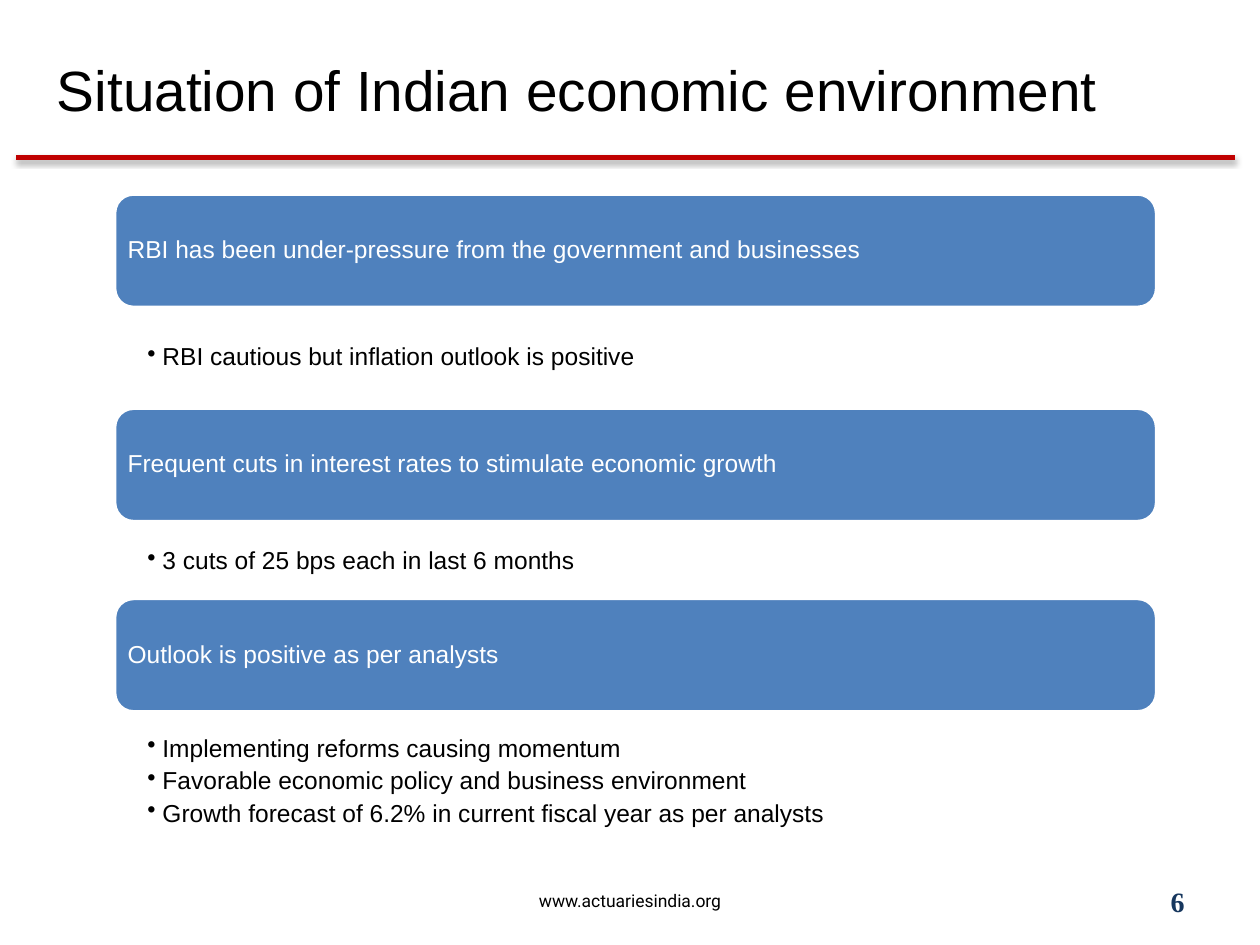
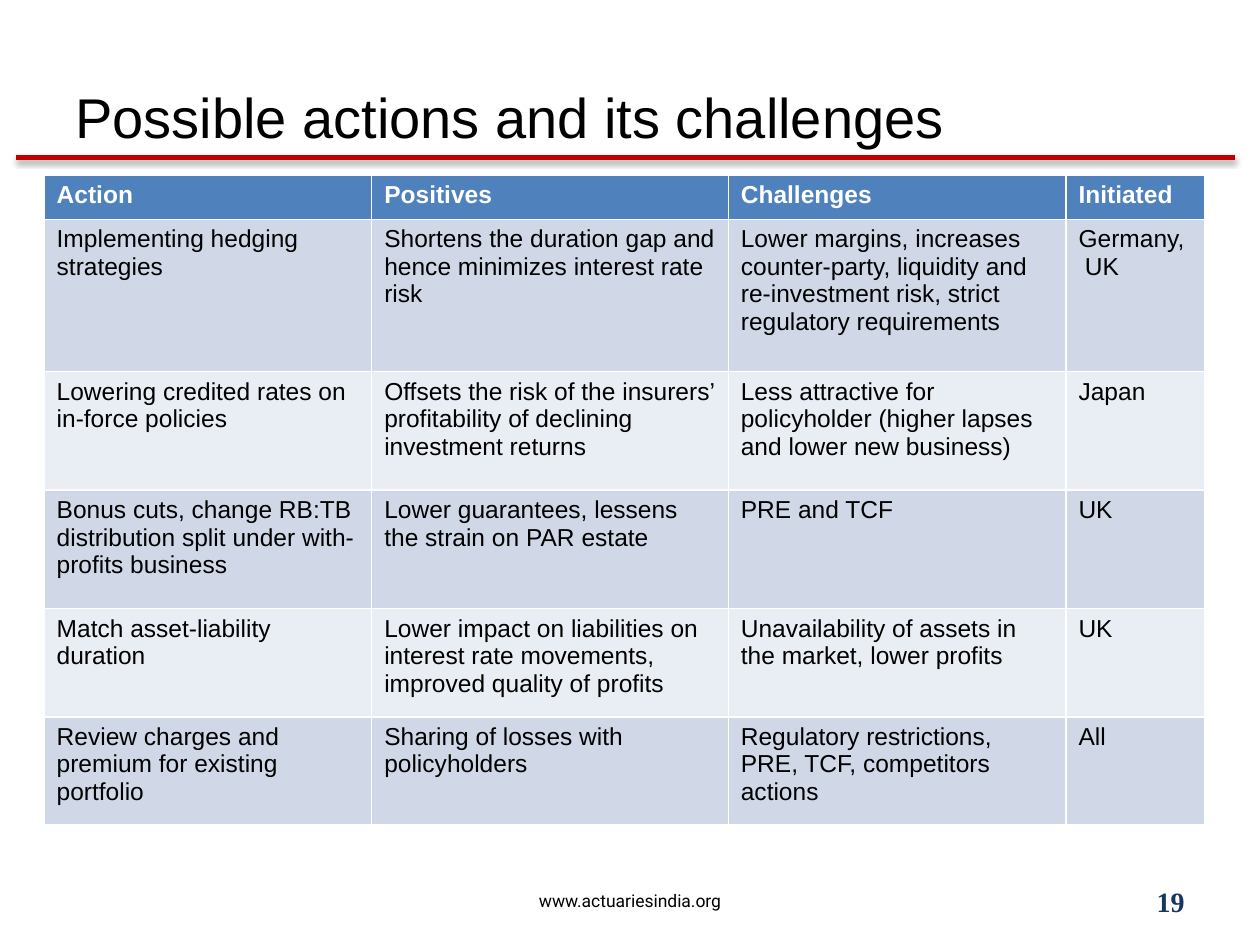
from lxml import etree
from pptx import Presentation
from pptx.dml.color import RGBColor
from pptx.enum.shapes import MSO_CONNECTOR, MSO_SHAPE
from pptx.enum.text import MSO_ANCHOR as Anchor, PP_ALIGN as Align
from pptx.oxml import parse_xml
from pptx.oxml.ns import nsdecls, qn
from pptx.util import Inches, Pt

# Content
WEBSITE = "www.actuariesindia.org"

SITUATION_TITLE = "Situation of Indian economic environment"
# Heading, heading top, bullets, bullet box top, bullet box height
SITUATION = [
    ("RBI has been under-pressure from the government and businesses", 1.54,
     ["RBI cautious but inflation outlook is positive"], 2.44, 0.8),
    ("Frequent cuts in interest rates to stimulate economic growth", 3.24,
     ["3 cuts of 25 bps each in last 6 months"], 4.06, 0.8),
    ("Outlook is positive as per analysts", 4.75,
     ["Implementing reforms causing momentum",
      "Favorable economic policy and business environment",
      "Growth forecast of 6.2% in current fiscal year as per analysts"], 5.72, 0.97),
]

ACTIONS_TITLE = "Possible actions and its challenges"
ACTIONS = [
    ("Action", "Positives", "Challenges", "Initiated"),
    ("Implementing hedging strategies",
     "Shortens the duration gap and hence minimizes interest rate risk",
     "Lower margins, increases counter-party, liquidity and re-investment risk, "
     "strict regulatory requirements",
     "Germany,\nUK"),
    ("Lowering credited rates on in-force policies",
     "Offsets the risk of the insurers’ profitability of declining investment returns",
     "Less attractive for policyholder (higher lapses and lower new business)",
     "Japan"),
    ("Bonus cuts, change RB:TB distribution split under with-profits business",
     "Lower guarantees, lessens the strain on PAR estate",
     "PRE and TCF",
     "UK"),
    ("Match asset-liability duration",
     "Lower impact on liabilities on interest rate movements, improved quality of profits",
     "Unavailability of assets in the market, lower profits",
     "UK"),
    ("Review charges and premium for existing portfolio",
     "Sharing of losses with policyholders",
     "Regulatory restrictions, PRE, TCF, competitors actions",
     "All"),
]
COLUMN_WIDTHS = [2.6, 2.83, 2.68, 1.1]
ROW_HEIGHTS = [0.35, 1.21, 0.94, 0.94, 0.86, 0.86]

# Shared style
BLACK, WHITE, RED, NAVY = "000000", "FFFFFF", "C00000", "17375E"
BLUE, BAND_DARK, BAND_LIGHT = "4F81BD", "D0D8E8", "E9EDF4"


def color(hex_string):
    return RGBColor.from_string(hex_string)


def indent(paragraph, left, first=0):
    properties = paragraph._p.get_or_add_pPr()
    properties.set("marL", str(Inches(left)))
    properties.set("indent", str(Inches(first)))
    return properties


def write(frame, text, size=14, font="Arial", fill=BLACK, bold=False, align=Align.LEFT,
          spacing=None, gap=0, bullet=False, later_indent=0):
    """Fill a text frame, one paragraph for each line of text."""
    frame.word_wrap = True
    for number, line in enumerate(text.split("\n")):
        paragraph = frame.add_paragraph() if number else frame.paragraphs[0]
        if bullet:
            properties = indent(paragraph, 0.12, -0.12)
            etree.SubElement(properties, qn("a:buChar")).set("char", "•")
        elif number and later_indent:
            indent(paragraph, later_indent)
        paragraph.alignment = align
        if spacing:
            paragraph.line_spacing = spacing
        if number and gap:
            paragraph.space_before = Pt(gap)
        run = paragraph.add_run()
        run.text = line
        run.font.name, run.font.size, run.font.bold = font, Pt(size), bold
        run.font.color.rgb = color(fill)


def set_margins(frame, left, top, right, bottom):
    frame.margin_left, frame.margin_top = Inches(left), Inches(top)
    frame.margin_right, frame.margin_bottom = Inches(right), Inches(bottom)


def add_text(slide, text, left, top, width, height, margins=(0.1, 0.05, 0.1, 0.05), **style):
    box = slide.shapes.add_textbox(Inches(left), Inches(top), Inches(width), Inches(height))
    frame = box.text_frame
    frame.vertical_anchor = Anchor.MIDDLE
    set_margins(frame, *margins)
    write(frame, text, **style)


def add_slide(presentation, title, title_left, title_top, number, **title_style):
    """Add a slide with its title, red rule, website and page number."""
    slide = presentation.slides.add_slide(presentation.slide_layouts[6])
    rule = slide.shapes.add_connector(
        MSO_CONNECTOR.STRAIGHT, Inches(0.13), Inches(1.25), Inches(9.8), Inches(1.25))
    rule.line.color.rgb = color(RED)
    rule.line.width = Pt(3)
    rule._element.spPr.append(parse_xml(
        f'<a:effectLst {nsdecls("a")}>'
        f'<a:outerShdw blurRad="{Pt(3.1)}" dist="{Pt(1.6)}" dir="5400000" rotWithShape="0">'
        f'<a:srgbClr val="{BLACK}"><a:alpha val="38000"/></a:srgbClr>'
        '</a:outerShdw></a:effectLst>'))
    add_text(slide, title, title_left, title_top, 9, 1.25, **title_style)
    add_text(slide, WEBSITE, 0, 6.95, 10, 0.4, size=10, font="Roboto", align=Align.CENTER)
    add_text(slide, str(number), 7.17, 6.95, 2.33, 0.4, size=16, font="Times New Roman",
             fill=NAVY, bold=True, align=Align.RIGHT)
    return slide


def build_situation(presentation):
    slide = add_slide(presentation, SITUATION_TITLE, 0.08, 0.08, 6,
                      size=32.4, align=Align.CENTER)
    left, width = 0.91, 8.27
    for heading, heading_top, bullets, bullets_top, bullets_height in SITUATION:
        bar = slide.shapes.add_shape(MSO_SHAPE.ROUNDED_RECTANGLE, Inches(left),
                                     Inches(heading_top), Inches(width), Inches(0.9))
        bar.shadow.inherit = False
        bar.fill.solid()
        bar.fill.fore_color.rgb = color(BLUE)
        bar.line.color.rgb = color(WHITE)
        bar.line.width = Pt(2)
        bar.text_frame.vertical_anchor = Anchor.MIDDLE
        set_margins(bar.text_frame, 0.06, 0.06, 0.06, 0.06)
        write(bar.text_frame, heading, fill=WHITE, spacing=0.9)
        add_text(slide, "\n".join(bullets), left, bullets_top, width, bullets_height,
                 margins=(0.26, 0.02, 0.11, 0.02), spacing=0.9, gap=3.5, bullet=True)


def build_actions(presentation):
    slide = add_slide(presentation, ACTIONS_TITLE, 0.5, 0.3, 19, size=32)
    table = slide.shapes.add_table(
        len(ACTIONS), len(COLUMN_WIDTHS), Inches(0.35), Inches(1.39),
        Inches(sum(COLUMN_WIDTHS)), Inches(sum(ROW_HEIGHTS))).table
    for column, width in zip(table.columns, COLUMN_WIDTHS):
        column.width = Inches(width)
    for row_number, (texts, height) in enumerate(zip(ACTIONS, ROW_HEIGHTS)):
        table.rows[row_number].height = Inches(height)
        header = row_number == 0
        band = BLUE if header else BAND_DARK if row_number % 2 else BAND_LIGHT
        for column_number, text in enumerate(texts):
            cell = table.cell(row_number, column_number)
            cell.fill.solid()
            cell.fill.fore_color.rgb = color(band)
            write(cell.text_frame, text, fill=WHITE if header else BLACK, bold=header,
                  later_indent=0.05)


def main():
    presentation = Presentation()
    presentation.slide_width, presentation.slide_height = Inches(10), Inches(7.5)
    build_situation(presentation)
    build_actions(presentation)
    presentation.save("out.pptx")


if __name__ == "__main__":
    main()
